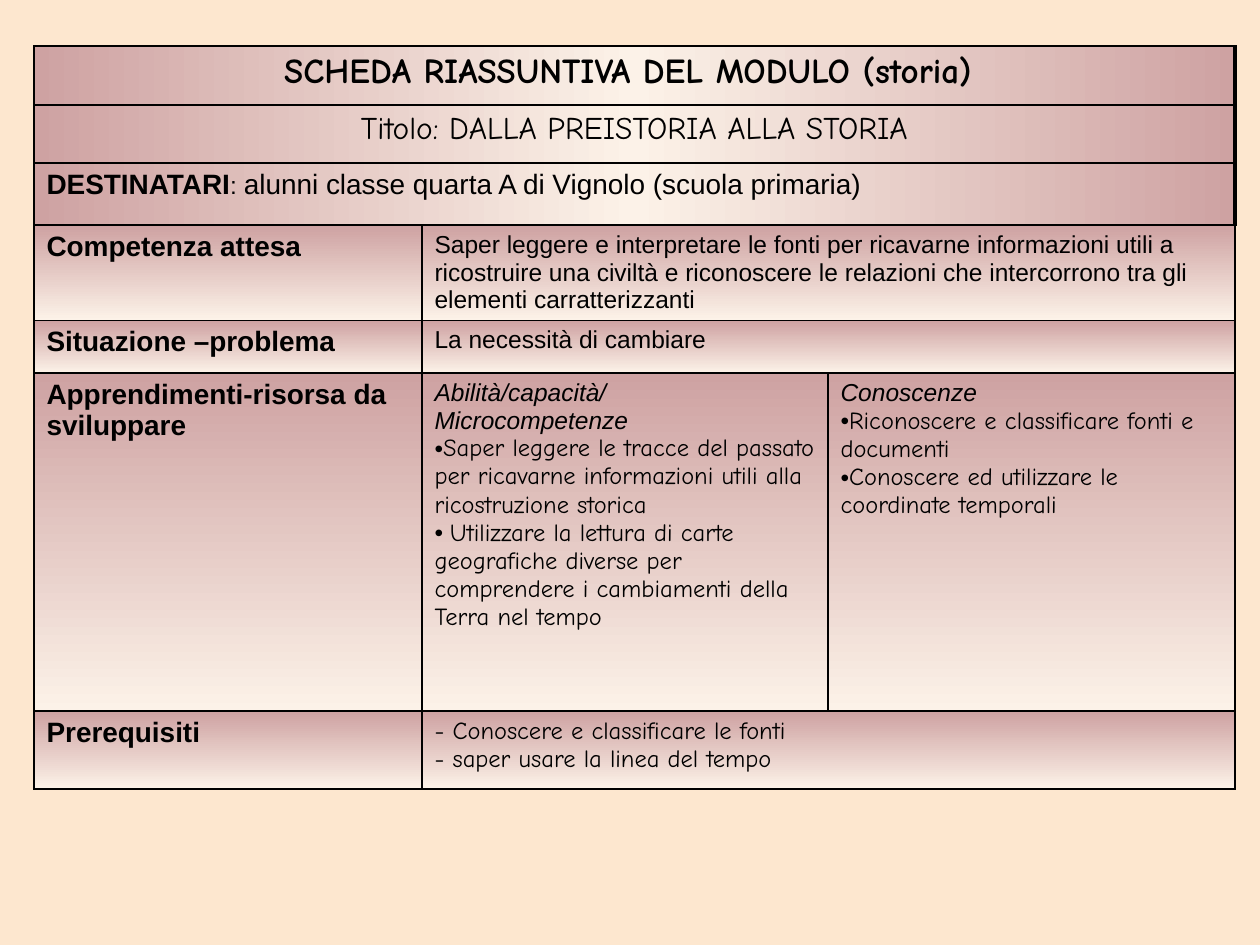
from lxml.etree import SubElement
from pptx import Presentation
from pptx.dml.color import RGBColor
from pptx.enum.text import PP_ALIGN
from pptx.oxml.ns import qn
from pptx.util import Pt

PX = 914400 / 126
COLORS = {"background": "FDE7CF", "rose": "CEA2A2", "cream": "FCF2E8", "ink": "000000"}
SANS, HAND = "Arial", "Comic Neue"
DOWN = (90, ["rose", "cream"])
ACROSS = (0, ["rose", "cream", "rose"])


def style_cell(cell, gradient, right=1):
    """Border lines in points, then a gradient of evenly spaced stops."""
    tc_pr = cell._tc.get_or_add_tcPr()
    for tag, width in (("lnL", 1), ("lnR", right), ("lnT", 1), ("lnB", 1)):
        ln = SubElement(tc_pr, qn(f"a:{tag}"), w=str(Pt(width)))
        SubElement(SubElement(ln, qn("a:solidFill")), qn("a:srgbClr"), val=COLORS["ink"])
    angle, names = gradient
    grad = SubElement(tc_pr, qn("a:gradFill"), rotWithShape="1")
    stops = SubElement(grad, qn("a:gsLst"))
    for i, name in enumerate(names):
        gs = SubElement(stops, qn("a:gs"), pos=str(100000 * i // (len(names) - 1)))
        SubElement(gs, qn("a:srgbClr"), val=COLORS[name])
    SubElement(grad, qn("a:lin"), ang=str(angle * 60000), scaled="1")


def write_cell(cell, paragraphs):
    """Each paragraph is a list of runs: (text, size, font, style letters)."""
    tf = cell.text_frame
    for i, runs in enumerate(paragraphs):
        p = tf.paragraphs[0] if i == 0 else tf.add_paragraph()
        for text, size, font, style in runs:
            r = p.add_run()
            r.text = text
            r.font.size = Pt(size)
            r.font.name = font
            r.font.bold = "b" in style
            r.font.italic = "i" in style
            r.font.color.rgb = RGBColor.from_string(COLORS["ink"])
        if "•" in runs[0][3]:
            p_pr = p._p.get_or_add_pPr()
            p_pr.set("marL", "0")
            p_pr.set("indent", "0")
            SubElement(p_pr, qn("a:buFont"), typeface=SANS)
            SubElement(p_pr, qn("a:buChar"), char="•")


prs = Presentation()
prs.slide_width, prs.slide_height = round(1260 * PX), round(945 * PX)
s = prs.slides.add_slide(prs.slide_layouts[6])
s.background.fill.solid()
s.background.fill.fore_color.rgb = RGBColor.from_string(COLORS["background"])

# Module sheet: one list of paragraphs per cell
module_rows = [
    [
        [[("Competenza attesa", 16, SANS, "b")]],
        [[("Saper leggere e interpretare le fonti per ricavarne informazioni utili a "
           "ricostruire una civiltà e riconoscere le relazioni che intercorrono tra gli "
           "elementi carratterizzanti", 14, SANS, "")]],
    ],
    [
        [[("Situazione –problema", 16, SANS, "b")]],
        [[("La necessità di cambiare", 14, SANS, "")]],
    ],
    [
        [[("Apprendimenti-risorsa da sviluppare", 16, SANS, "b")]],
        [
            [("Abilità/capacità/", 14, SANS, "i")],
            [("Microcompetenze", 14, SANS, "i")],
            [("Saper leggere le tracce del passato per ricavarne informazioni utili alla "
              "ricostruzione storica", 14, HAND, "•")],
            [(" ", 14, SANS, "•"),
             ("Utilizzare la lettura di carte geografiche diverse per comprendere i "
              "cambiamenti della Terra nel tempo", 14, HAND, "")],
        ],
        [
            [("Conoscenze", 14, SANS, "i")],
            [("Riconoscere e classificare fonti e documenti", 14, HAND, "•")],
            [("Conoscere ed utilizzare le coordinate temporali", 14, HAND, "•")],
        ],
    ],
    [
        [[("Prerequisiti", 16, SANS, "b")]],
        [[("- Conoscere e classificare le fonti", 14, HAND, "")],
         [("- saper usare la linea del tempo", 14, HAND, "")]],
    ],
]
heading_rows = [
    [[[("SCHEDA RIASSUNTIVA DEL MODULO (storia) ", 20, HAND, "b")]]],
    [[[("Titolo: DALLA PREISTORIA ALLA STORIA", 18, HAND, "")]]],
    [[[("DESTINATARI", 16, SANS, "b"), (": ", 14, SANS, ""),
       ("alunni classe quarta A di Vignolo (scuola primaria)", 16, SANS, "")]]],
]

# Both tables share the left edge and the total width
tables = [
    (225, [388, 406, 407], [94, 53, 338, 78], module_rows, DOWN, 1),
    (46, [1201], [59, 58, 62], heading_rows, ACROSS, 2.25),
]
for top, widths, heights, rows, gradient, right in tables:
    frame = s.shapes.add_table(len(heights), len(widths), round(34 * PX), round(top * PX),
                               round(sum(widths) * PX), round(sum(heights) * PX))
    table = frame.table
    table.first_row = table.horz_banding = False
    for column, width in zip(table.columns, widths):
        column.width = round(width * PX)
    for i, (height, cells) in enumerate(zip(heights, rows)):
        table.rows[i].height = round(height * PX)
        for cell in table.rows[i].cells:
            style_cell(cell, gradient, right)
        for j, paragraphs in enumerate(cells):
            write_cell(table.cell(i, j), paragraphs)
        if len(cells) < len(widths):
            table.cell(i, len(cells) - 1).merge(table.cell(i, len(widths) - 1))

# The heading table is last: centre its first two lines
for i in range(2):
    table.cell(i, 0).text_frame.paragraphs[0].alignment = PP_ALIGN.CENTER
table.cell(0, 0).text_frame.paragraphs[0].space_before = Pt(8)

prs.save("out.pptx")
